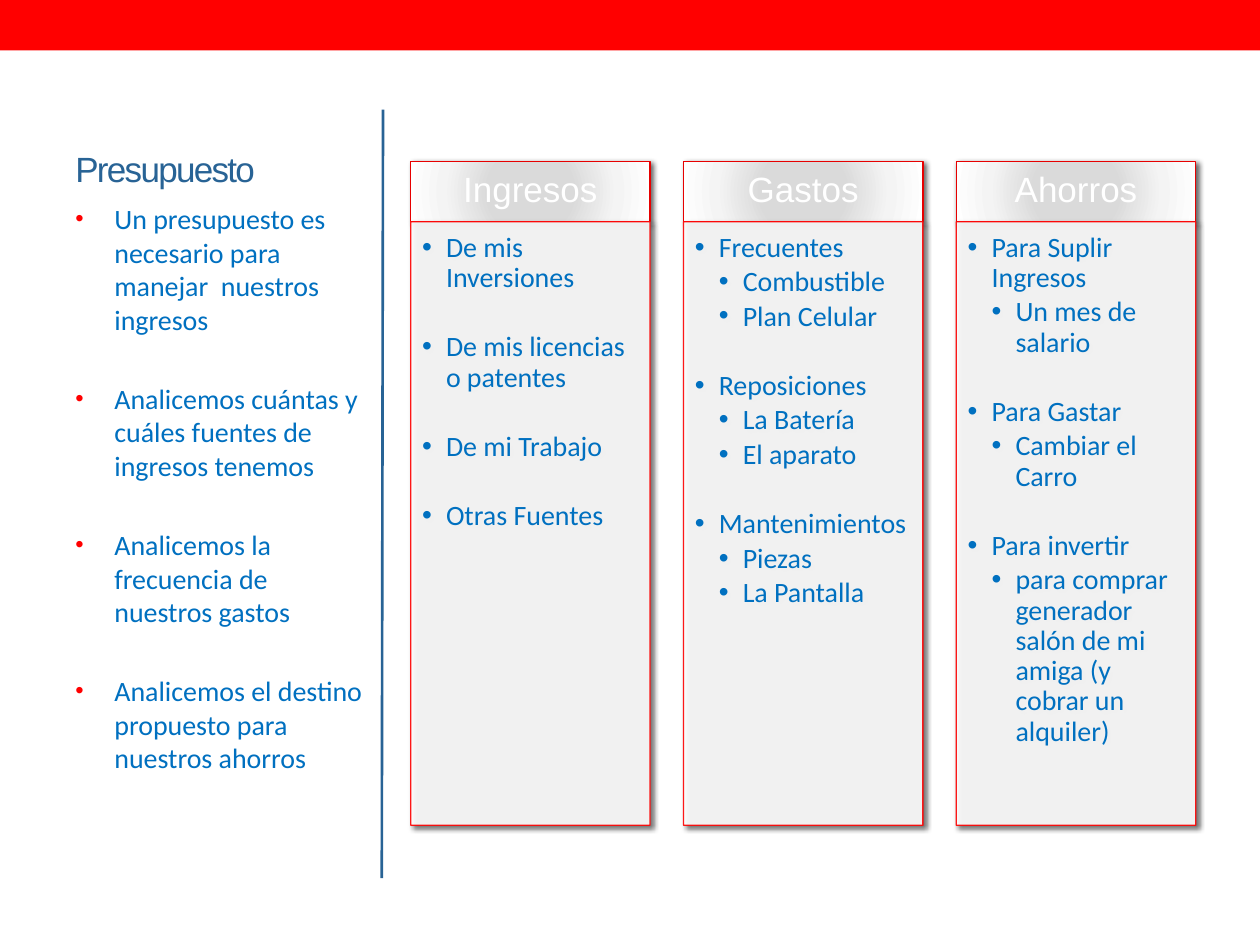
from pptx import Presentation
from pptx.dml.color import RGBColor
from pptx.enum.shapes import MSO_CONNECTOR, MSO_SHAPE
from pptx.enum.text import MSO_ANCHOR, PP_ALIGN
from pptx.oxml import parse_xml
from pptx.oxml.ns import nsdecls, qn
from pptx.util import Inches, Pt
from lxml.etree import SubElement

COLORS = {
    "red": "FF0000", "header_line": "E70000", "navy": "286395",
    "text": "0070C0", "white": "FFFFFF", "black": "000000",
}
HEADER_STOPS = [(0, "DADADA"), (34, "DADADA"), (70, "F4F4F4"), (100, "FFFFFF")]

ADVICE = [
    "Un presupuesto es necesario para manejar  nuestros ingresos",
    "Analicemos cuántas y cuáles fuentes de ingresos tenemos",
    "Analicemos la frecuencia de nuestros gastos",
    "Analicemos el destino propuesto para nuestros ahorros",
]
# Each column holds groups: a first-level item, then its sub-items
COLUMNS = [
    ("Ingresos", [["De mis Inversiones"], ["De mis licencias o patentes"],
                  ["De mi Trabajo"], ["Otras Fuentes"]]),
    ("Gastos", [["Frecuentes", "Combustible", "Plan Celular"],
                ["Reposiciones", "La Batería", "El aparato"],
                ["Mantenimientos", "Piezas", "La Pantalla"]]),
    ("Ahorros", [["Para Suplir Ingresos", "Un mes de salario"],
                 ["Para Gastar", "Cambiar el Carro"],
                 ["Para invertir", "para comprar generador salón de mi amiga "
                                   "(y cobrar un alquiler)"]]),
]


def color(name):
    return RGBColor.from_string(COLORS[name])


def add_run(paragraph, text, size, font, color_name):
    run = paragraph.add_run()
    run.text = text
    run.font.size = Pt(size)
    run.font.name = font
    run.font.color.rgb = color(color_name)
    return run


def add_bullet(paragraph, margin, hanging, color_name=None, percent=None):
    properties = paragraph._p.get_or_add_pPr()
    properties.set("marL", str(Inches(margin)))
    properties.set("indent", str(-Inches(hanging)))
    if color_name:
        bullet_color = SubElement(properties, qn("a:buClr"))
        SubElement(bullet_color, qn("a:srgbClr"), val=COLORS[color_name])
    if percent:
        SubElement(properties, qn("a:buSzPct"), val=str(percent * 1000))
    SubElement(properties, qn("a:buFont"), typeface="Arial")
    SubElement(properties, qn("a:buChar"), char="•")


def set_frame(frame, insets, anchor=MSO_ANCHOR.TOP):
    frame.word_wrap = True
    frame.vertical_anchor = anchor
    (frame.margin_left, frame.margin_top,
     frame.margin_right, frame.margin_bottom) = [Inches(i) for i in insets]


def next_paragraph(frame, index):
    return frame.add_paragraph() if index else frame.paragraphs[0]


def add_box(slide, left, top, width, height, line_name=None):
    shape = slide.shapes.add_shape(MSO_SHAPE.RECTANGLE, Inches(left), Inches(top),
                                   Inches(width), Inches(height))
    shape.shadow.inherit = False
    shape.fill.solid()
    if line_name:
        shape.line.color.rgb = color(line_name)
        shape.line.width = Pt(0.75)
    else:
        shape.line.fill.background()
    return shape


def add_shadow(shape):
    effects = shape._element.spPr.find(qn("a:effectLst"))
    shadow = SubElement(effects, qn("a:outerShdw"), blurRad=str(Pt(3)),
                        dist=str(Pt(2)), dir=str(45 * 60000),
                        algn="tl", rotWithShape="0")
    shadow_color = SubElement(shadow, qn("a:srgbClr"), val=COLORS["black"])
    SubElement(shadow_color, qn("a:alpha"), val="60000")


def set_header_gradient(shape):
    stops = "".join(f'<a:gs pos="{position * 1000}"><a:srgbClr val="{value}"/></a:gs>'
                    for position, value in HEADER_STOPS)
    gradient = parse_xml(
        f'<a:gradFill {nsdecls("a")} rotWithShape="1"><a:gsLst>{stops}</a:gsLst>'
        '<a:path path="circle"><a:fillToRect l="100000" t="100000" '
        'r="100000" b="100000"/></a:path></a:gradFill>')
    properties = shape._element.spPr
    properties.replace(properties.find(qn("a:solidFill")), gradient)


def add_frame_lines(slide):
    """Top band and the vertical divider."""
    band = add_box(slide, 0, 0, 10, 0.4)
    band.fill.fore_color.rgb = color("red")
    divider = slide.shapes.add_connector(MSO_CONNECTOR.STRAIGHT, Inches(3.04),
                                         Inches(0.87), Inches(3.03), Inches(6.97))
    divider.line.color.rgb = color("navy")
    divider.line.width = Pt(1.5)
    SubElement(divider._element.spPr, qn("a:effectLst"))


def add_sidebar(slide, left, top, width, height):
    # Title
    title = slide.shapes.add_textbox(Inches(left), Inches(top), Inches(2.34), Inches(0.93))
    set_frame(title.text_frame, (0.1, 0.05, 0.1, 0.05), MSO_ANCHOR.MIDDLE)
    run = add_run(title.text_frame.paragraphs[0], "Presupuesto", 20, "Arial", "navy")
    run._r.get_or_add_rPr().set("spc", "-100")

    # Advice list
    body_top = top + 0.68
    body = slide.shapes.add_textbox(Inches(left), Inches(body_top), Inches(width),
                                    Inches(height - 0.68))
    set_frame(body.text_frame, (0.1, 0.05, 0.1, 0.05))
    for index, text in enumerate(ADVICE):
        paragraph = next_paragraph(body.text_frame, index)
        paragraph.space_before = Pt(26 if index else 0)
        add_bullet(paragraph, 0.31, 0.31, "red", 85)
        add_run(paragraph, text, 16, "Calibri", "text")


def add_column(slide, left, top, width, height, heading, groups):
    # Heading
    header_height = 0.48
    header = add_box(slide, left, top, width, header_height, "header_line")
    set_header_gradient(header)
    add_shadow(header)
    set_frame(header.text_frame, (0.16, 0.09, 0.16, 0.09), MSO_ANCHOR.MIDDLE)
    paragraph = header.text_frame.paragraphs[0]
    paragraph.alignment = PP_ALIGN.CENTER
    paragraph.line_spacing = 0.9
    add_run(paragraph, heading, 20, "Arial", "white")

    # Body panel, slightly transparent in fill and line
    panel = add_box(slide, left, top + header_height, width,
                    height - header_height, "red")
    panel.fill.fore_color.rgb = color("white")
    for value in panel._element.spPr.findall(".//" + qn("a:srgbClr")):
        SubElement(value, qn("a:alpha"), val="90000")
    add_shadow(panel)

    # Two-level list, with wider space after each group
    frame = panel.text_frame
    set_frame(frame, (0.09, 0.09, 0.12, 0.14))
    items = [(text, min(position, 1), text is group[-1])
             for group in groups for position, text in enumerate(group)]
    for index, (text, level, ends_group) in enumerate(items):
        paragraph = next_paragraph(frame, index)
        paragraph.alignment = PP_ALIGN.LEFT
        paragraph.level = level + 1
        paragraph.line_spacing = 0.9
        paragraph.space_after = Pt(22.4 if ends_group else 2.4)
        add_bullet(paragraph, 0.19 * (level + 1), 0.19)
        add_run(paragraph, text, 16, "Calibri", "text")


def main():
    presentation = Presentation()
    presentation.slide_width = Inches(10)
    presentation.slide_height = Inches(7.5)
    slide = presentation.slides.add_slide(presentation.slide_layouts[6])

    add_frame_lines(slide)
    for index, (heading, groups) in enumerate(COLUMNS):
        add_column(slide, 3.26 + index * 2.165, 1.28, 1.9, 5.27, heading, groups)
    add_sidebar(slide, 0.5, 0.87, 2.53, 6.1)
    presentation.save("out.pptx")


if __name__ == "__main__":
    main()
